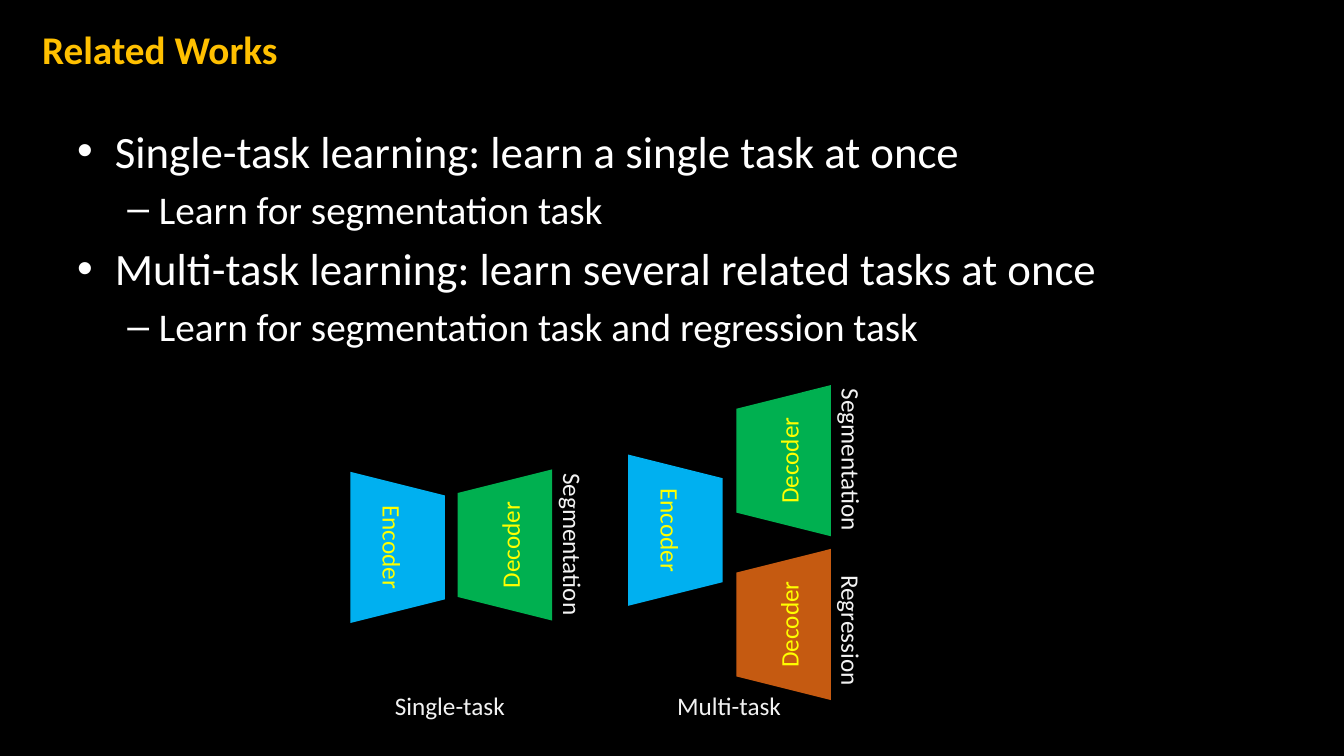
from pptx import Presentation
from pptx.dml.color import RGBColor
from pptx.enum.shapes import MSO_SHAPE
from pptx.enum.text import MSO_ANCHOR, PP_ALIGN
from pptx.util import Pt
from lxml import etree

TRAPEZOID = MSO_SHAPE.TRAPEZOID
MIDDLE = MSO_ANCHOR.MIDDLE
CENTER = PP_ALIGN.CENTER
DRAWING = "{http://schemas.openxmlformats.org/drawingml/2006/main}"


def color(value):
    return RGBColor.from_string(value)


def add_span(para, text, size, ink, bold=False):
    span = para.add_run()
    span.text = text
    span.font.name = "Calibri"
    span.font.size = Pt(size)
    span.font.bold = bold
    span.font.color.rgb = color(ink)


deck = Presentation()
deck.slide_width = Pt(960)
deck.slide_height = Pt(540)
page = deck.slides.add_slide(deck.slide_layouts[6])
page.background.fill.solid()
page.background.fill.fore_color.rgb = color("000000")

title = page.shapes.add_textbox(Pt(23), Pt(-10), Pt(908.6), Pt(90))
title.text_frame.word_wrap = True
title.text_frame.vertical_anchor = MIDDLE
add_span(title.text_frame.paragraphs[0], "Related Works", 28, "FFC000", True)

body = page.shapes.add_textbox(Pt(48), Pt(84.5), Pt(864), Pt(379.5))
body.text_frame.word_wrap = True
levels = [("•", 27, 27, 32), ("–", 58.5, 22.5, 28)]
points = [
    (0, "Single-task learning: learn a single task at once"),
    (1, "Learn for segmentation task"),
    (0, "Multi-task learning: learn several related tasks at once"),
    (1, "Learn for segmentation task and regression task"),
]
for index, (level, text) in enumerate(points):
    mark, indent, hanging, size = levels[level]
    para = body.text_frame.add_paragraph() if index else body.text_frame.paragraphs[0]
    para.level = level
    if index:
        para.space_before = Pt(size * 0.2)
    properties = para._p.get_or_add_pPr()
    properties.set("marL", str(Pt(indent)))
    properties.set("indent", str(-Pt(hanging)))
    etree.SubElement(properties, DRAWING + "buFont", typeface="Arial")
    etree.SubElement(properties, DRAWING + "buChar", char=mark)
    add_span(para, text, size, "FFFFFF")

blocks = [
    ("Decoder", 306.6, 355.5, 270, "00B050"),
    ("Encoder", 230, 357.3, 90, "00B0F0"),
    ("Decoder", 505.8, 412.3, 270, "C55A11"),
    ("Encoder", 428.5, 345, 90, "00B0F0"),
    ("Decoder", 505.8, 295.3, 270, "00B050"),
]
for text, left, top, rotation, fill in blocks:
    block = page.shapes.add_shape(TRAPEZOID, Pt(left), Pt(top), Pt(108), Pt(67.5))
    block.rotation = rotation
    block.shadow.inherit = False
    block.fill.solid()
    block.fill.fore_color.rgb = color(fill)
    block.line.fill.background()
    block.text_frame.word_wrap = True
    block.text_frame.vertical_anchor = MIDDLE
    para = block.text_frame.paragraphs[0]
    para.alignment = CENTER
    add_span(para, text, 18, "FFFF00")

labels = [
    ("Segmentation", 350.6, 375.1, 117.4, 90),
    ("Segmentation", 549.4, 314.6, 117.4, 90),
    ("Regression", 560.9, 436.3, 94.3, 90),
    ("Single-task", 275, 489.6, 93.6, 0),
    ("Multi-task", 476.6, 489.6, 89.3, 0),
]
for text, left, top, width, rotation in labels:
    label = page.shapes.add_textbox(Pt(left), Pt(top), Pt(width), Pt(29))
    label.rotation = rotation
    label.text_frame.word_wrap = False
    add_span(label.text_frame.paragraphs[0], text, 18, "F2F2F2")

deck.save("out.pptx")
